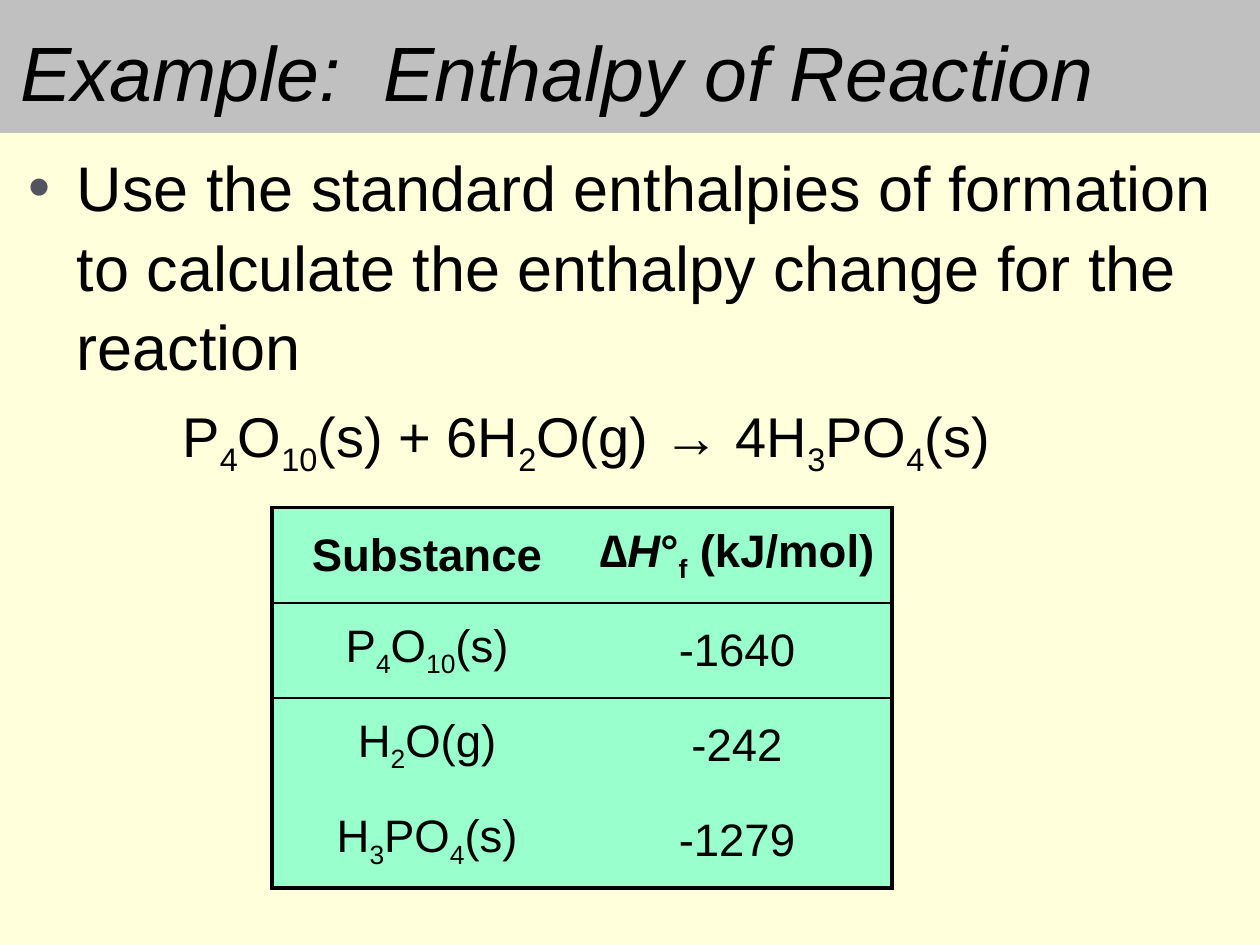
from lxml import etree
from pptx import Presentation
from pptx.dml.color import RGBColor
from pptx.enum.shapes import MSO_SHAPE
from pptx.enum.text import MSO_ANCHOR, MSO_AUTO_SIZE, PP_ALIGN
from pptx.oxml.ns import qn
from pptx.util import Inches, Pt

BLACK = RGBColor(0x00, 0x00, 0x00)
CREAM = RGBColor(0xFF, 0xFF, 0xDB)
GREY = RGBColor(0xC0, 0xC0, 0xC0)
MINT = RGBColor(0x99, 0xFF, 0xCC)
BULLET = "535360"
FONT = "Arial"
NO_STYLE = "{2D5ABB26-0587-4C30-8999-92F81FD0307C}"
LEFT, CENTER = PP_ALIGN.LEFT, PP_ALIGN.CENTER
MIDDLE, BOTTOM = MSO_ANCHOR.MIDDLE, MSO_ANCHOR.BOTTOM
NO_FIT = MSO_AUTO_SIZE.NONE


def add_runs(p, text, size, bold=False, italic=False):
    """Add text to a paragraph; parts between underscores become subscripts."""
    for i, part in enumerate(text.split("_")):
        if not part:
            continue
        r = p.add_run()
        r.text = part
        r.font.name, r.font.size = FONT, Pt(size)
        r.font.bold, r.font.italic = bold, italic
        r.font.color.rgb = BLACK
        if i % 2:
            r.font._element.set("baseline", "-25000")


def add_border(cell, sides):
    """Draw cell borders given as (tag, width in points), in schema order."""
    tcPr = cell._tc.get_or_add_tcPr()
    for i, (tag, width) in enumerate(sides):
        ln = etree.Element(qn(f"a:{tag}"), w=str(Pt(width)))
        fill = etree.SubElement(ln, qn("a:solidFill"))
        etree.SubElement(fill, qn("a:srgbClr"), val=str(BLACK))
        tcPr.insert(i, ln)


prs = Presentation()
prs.slide_width, prs.slide_height = Inches(10), Inches(7.5)
W, H = prs.slide_width, prs.slide_height
s = prs.slides.add_slide(prs.slide_layouts[1])
s.background.fill.solid()
s.background.fill.fore_color.rgb = CREAM

# Title band, behind the placeholders
band = s.shapes.add_shape(MSO_SHAPE.RECTANGLE, 0, 0, W, int(H * 0.14))
band.shadow.inherit = False
band.fill.solid()
band.fill.fore_color.rgb = GREY
band.line.color.rgb = GREY
band.line.width = Pt(0.75)
s.shapes._spTree.insert(2, band._element)

# Title
title = s.shapes.title
title.left, title.top = Inches(0.06), Inches(0.07)
title.width, title.height = Inches(9.1), Inches(0.91)
tf = title.text_frame
tf.auto_size, tf.vertical_anchor = NO_FIT, BOTTOM
p = tf.paragraphs[0]
p.alignment = LEFT
add_runs(p, "Example:  Enthalpy of Reaction", 44, italic=True)

# Task
body = s.placeholders[1]
body.left, body.top = Inches(0.13), Inches(1.1)
body.width, body.height = Inches(9.68), Inches(6.21)
tf = body.text_frame
tf.auto_size = NO_FIT
p = tf.paragraphs[0]
pPr = p._p.get_or_add_pPr()
pPr.set("marL", str(Inches(0.38)))
pPr.set("indent", str(-Inches(0.38)))
color = etree.SubElement(pPr, qn("a:buClr"))
etree.SubElement(color, qn("a:srgbClr"), val=BULLET)
etree.SubElement(pPr, qn("a:buChar"), char="•")
p.space_before, p.line_spacing = Pt(0), 1.05
add_runs(p, "Use the standard enthalpies of formation to calculate "
            "the enthalpy change for the reaction", 36)

# Reaction equation
equation = s.shapes.add_textbox(Inches(1.35), Inches(3.11), Inches(7.37), Inches(0.63))
tf = equation.text_frame
tf.word_wrap = True
p = tf.paragraphs[0]
p.line_spacing = 1.05
add_runs(p, "P_4_O_10_(s) + 6H_2_O(g) → 4H_3_PO_4_(s)", 32)

# Enthalpies of formation
rows = [
    ("Substance", ""),
    ("P_4_O_10_(s)", "-1640"),
    ("H_2_O(g)", "-242"),
    ("H_3_PO_4_(s)", "-1279"),
]
last = len(rows) - 1
frame = s.shapes.add_table(len(rows), 2, Inches(2.16), Inches(4.03),
                           Inches(4.92), Inches(3.02))
table = frame.table
table.first_row = table.horz_banding = False
table._tbl.tblPr.find(qn("a:tableStyleId")).text = NO_STYLE
for i, row in enumerate(rows):
    for j, text in enumerate(row):
        cell = table.cell(i, j)
        cell.fill.solid()
        cell.fill.fore_color.rgb = MINT
        cell.vertical_anchor = MIDDLE
        p = cell.text_frame.paragraphs[0]
        p.alignment = CENTER
        add_runs(p, text, 26, bold=i == 0)
        sides = [("lnR", 2.25) if j else ("lnL", 2.25)]
        if i < 2:
            sides.append(("lnT", 1 if i else 2.25))
        if i in (0, last):
            sides.append(("lnB", 2.25 if i else 1))
        add_border(cell, sides)

p = table.cell(0, 1).text_frame.paragraphs[0]
add_runs(p, "∆", 26, bold=True)
add_runs(p, "H", 26, bold=True, italic=True)
add_runs(p, "°_f_ (kJ/mol)", 26, bold=True)

prs.save("out.pptx")
